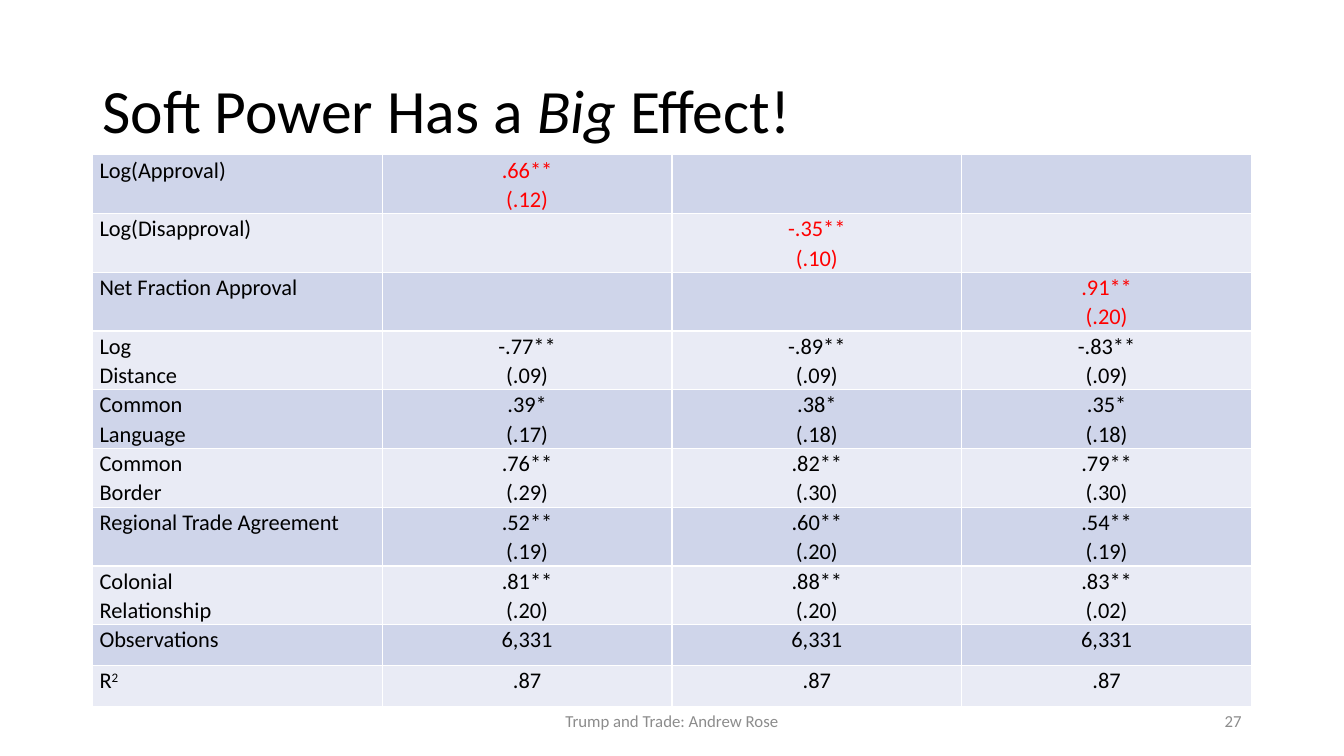
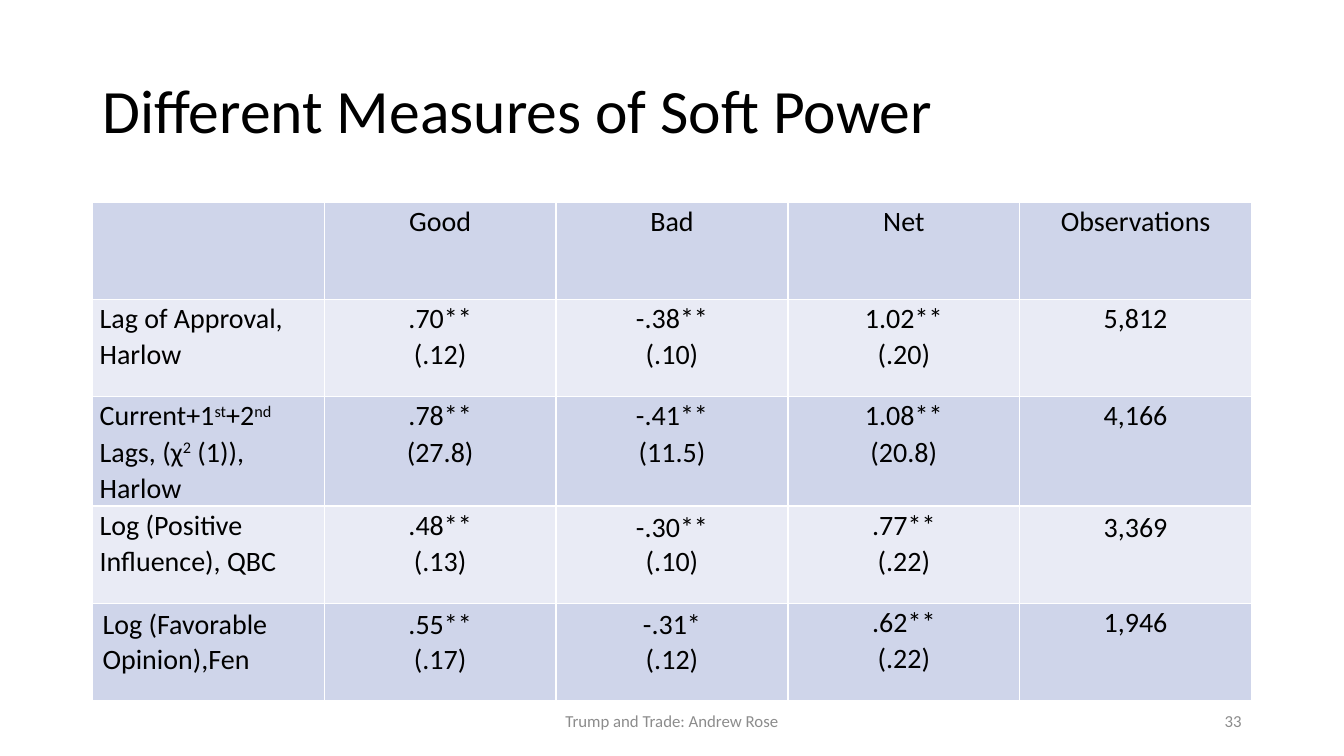
from lxml.etree import SubElement
from pptx import Presentation
from pptx.dml.color import RGBColor
from pptx.enum.text import MSO_ANCHOR, PP_ALIGN
from pptx.oxml.ns import qn
from pptx.util import Cm, Pt

FONT = "Calibri"
BLACK, RED, GREY, WHITE = "000000", "FF0000", "8C8C8C", "FFFFFF"
BANDS = ("CFD5EA", "E9EBF5")
LEFT, WIDTH = 2.33, 29.21
FOOTER_TOP, FOOTER_HEIGHT = 17.66, 1.01
FOOTER = "Trump and Trade: Andrew Rose"
TIGHT_SPACING = 1.07

EFFECTS = [
    ("Log(Approval)", ".66**\n(.12)", "", ""),
    ("Log(Disapproval)", "", "-.35**\n(.10)", ""),
    ("Net Fraction Approval", "", "", ".91**\n(.20)"),
    ("Log\nDistance", "-.77**\n(.09)", "-.89**\n(.09)", "-.83**\n(.09)"),
    ("Common\nLanguage", ".39*\n(.17)", ".38*\n(.18)", ".35*\n(.18)"),
    ("Common\nBorder", ".76**\n(.29)", ".82**\n(.30)", ".79**\n(.30)"),
    ("Regional Trade Agreement", ".52**\n(.19)", ".60**\n(.20)", ".54**\n(.19)"),
    ("Colonial\nRelationship", ".81**\n(.20)", ".88**\n(.20)", ".83**\n(.02)"),
    ("Observations", "6,331", "6,331", "6,331"),
    ("R^2^", ".87", ".87", ".87"),
]
SOFT_POWER_ROWS = 3

MEASURES = [
    ("", "Good", "Bad", "Net", "Observations"),
    ("Lag of Approval, Harlow", ".70**\n(.12)", "-.38**\n(.10)", "1.02**\n(.20)", "5,812"),
    ("Current+1^st^+2^nd^ Lags, (χ^2^ (1)), Harlow",
     ".78**\n(27.8)", "-.41**\n(11.5)", "1.08**\n(20.8)", "4,166"),
    ("Log (Positive Influence), QBC", ".48**\n(.13)", "-.30**\n(.10)", ".77**\n(.22)", "3,369"),
    ("Log (Favorable Opinion),Fen", ".55**\n(.17)", "-.31*\n(.12)", ".62**\n(.22)", "1,946"),
]
# Cells (row, column) with default margins and single line spacing
LOOSE_CELLS = {(3, 2), (3, 4), (4, 0), (4, 1), (4, 2)}


def rgb(colour):
    return RGBColor.from_string(colour)


def write(tf, text, size=16, colour=BLACK, align=PP_ALIGN.LEFT, spacing=1.0, marked="super"):
    """Fill tf, one paragraph a line; parts between ^ signs are raised or italic."""
    for i, line in enumerate(text.split("\n")):
        p = tf.add_paragraph() if i else tf.paragraphs[0]
        p.alignment = align
        p.line_spacing = spacing
        for j, part in enumerate(line.split("^")):
            if not part:
                continue
            r = p.add_run()
            r.text = part
            r.font.name = FONT
            r.font.size = Pt(size)
            r.font.color.rgb = rgb(colour)
            if j % 2 and marked == "super":
                r.font._element.set("baseline", "30000")
            elif j % 2:
                r.font.italic = True


def add_text(s, left, top, width, height, text, **style):
    tf = s.shapes.add_textbox(Cm(left), Cm(top), Cm(width), Cm(height)).text_frame
    tf.word_wrap = True
    tf.vertical_anchor = MSO_ANCHOR.MIDDLE
    write(tf, text, **style)


def set_borders(cell):
    tc_pr = cell._tc.get_or_add_tcPr()
    for side in ("lnL", "lnR", "lnT", "lnB"):
        ln = SubElement(tc_pr, qn(f"a:{side}"), w=str(Pt(1)))
        SubElement(SubElement(ln, qn("a:solidFill")), qn("a:srgbClr"), val=WHITE)


def add_table(s, top, rows, heights, size, red_rows=0, loose=()):
    columns = len(rows[0])
    table = s.shapes.add_table(len(rows), columns, Cm(LEFT), Cm(top),
                               Cm(WIDTH), Cm(sum(heights))).table
    table.first_row = table.horz_banding = False
    for column in table.columns:
        column.width = Cm(WIDTH / columns)
    for i, (row, height) in enumerate(zip(rows, heights)):
        table.rows[i].height = Cm(height)
        for j, text in enumerate(row):
            cell = table.cell(i, j)
            set_borders(cell)
            cell.fill.solid()
            cell.fill.fore_color.rgb = rgb(BANDS[i % 2])
            tight = (i, j) not in loose
            if tight:
                cell.margin_left = cell.margin_right = Cm(0.18)
                cell.margin_top = cell.margin_bottom = 0
            write(cell.text_frame, text, size=size,
                  colour=RED if j and i < red_rows else BLACK,
                  align=PP_ALIGN.CENTER if j else PP_ALIGN.LEFT,
                  spacing=TIGHT_SPACING if tight else 1.0)


def add_slide(prs, title, number):
    """Add a slide with the shared title, footer and slide number."""
    s = prs.slides.add_slide(prs.slide_layouts[6])
    add_text(s, LEFT, 1.01, WIDTH, 3.68, title, size=44, spacing=0.9, marked="italic")
    add_text(s, 11.22, FOOTER_TOP, 11.43, FOOTER_HEIGHT, FOOTER,
             size=12, colour=GREY, align=PP_ALIGN.CENTER)
    add_text(s, 23.92, FOOTER_TOP, 7.62, FOOTER_HEIGHT, str(number),
             size=12, colour=GREY, align=PP_ALIGN.RIGHT)
    return s


def main():
    prs = Presentation()
    prs.slide_width, prs.slide_height = Cm(33.87), Cm(19.05)

    s = add_slide(prs, "Soft Power Has a ^Big^ Effect!", 27)
    add_table(s, 3.9, EFFECTS, [1.48] * 8 + [1.03] * 2, 16, red_rows=SOFT_POWER_ROWS)

    s = add_slide(prs, "Different Measures of Soft Power", 33)
    add_table(s, 5.09, MEASURES, [2.45, 2.45, 2.76, 2.45, 2.45], 20, loose=LOOSE_CELLS)

    prs.save("out.pptx")


if __name__ == "__main__":
    main()
